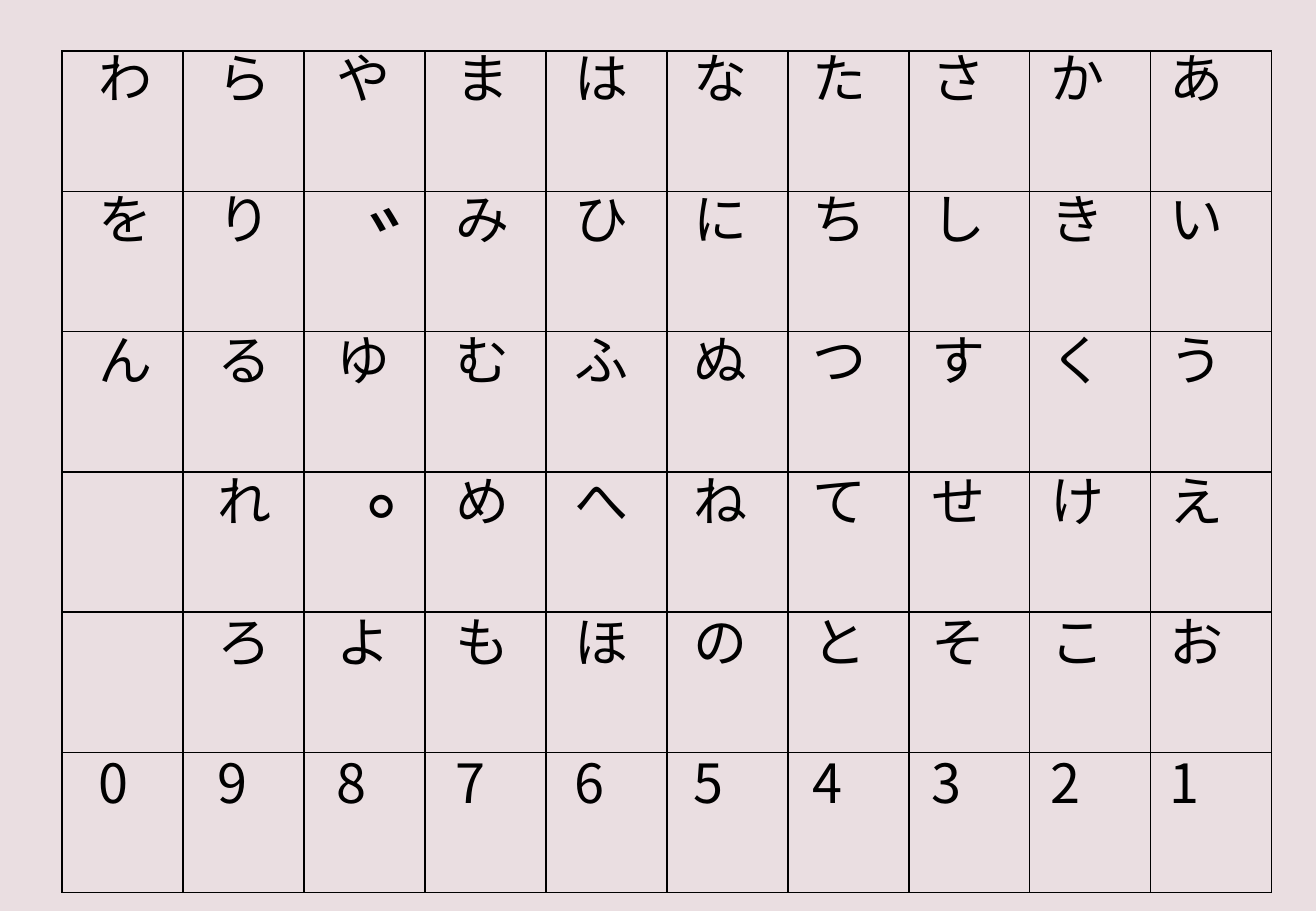
"""Build a hiragana letter board with a row of digits."""
from lxml.etree import SubElement
from pptx import Presentation
from pptx.dml.color import RGBColor
from pptx.enum.text import MSO_AUTO_SIZE as AutoSize
from pptx.oxml.ns import qn
from pptx.util import Pt

PX = 7526
FONT = "Noto Sans CJK JP"
COLORS = {"background": "EADEE1", "ink": "000000"}
KANA_COLUMNS = [
    "あいうえお1", "かきくけこ2", "さしすせそ3", "たちつてと4", "なにぬねの5",
    "はひふへほ6", "まみむめも7", "や ゆ よ8", "らりるれろ9", "わをん  0",
]
SOUND_MARKS = [("゛", 358, 186), ("゜", 356, 471)]
ROWS = 6


def add_letter(page, letter, left, top, height, size):
    box = page.shapes.add_textbox(left * PX, top * PX, 81 * PX, height * PX)
    frame = box.text_frame
    frame.word_wrap = True
    frame.auto_size = AutoSize.SHAPE_TO_FIT_TEXT
    frame.text = letter
    font = frame.paragraphs[0].runs[0].font
    font.size = Pt(size)
    font.name = FONT
    font.color.rgb = RGBColor.from_string(COLORS["ink"])
    SubElement(font._element, qn("a:ea"), typeface=FONT)


def add_borders(cell):
    properties = cell._tc.get_or_add_tcPr()
    for position, side in enumerate(("a:lnL", "a:lnR", "a:lnT", "a:lnB")):
        line = SubElement(properties, qn(side), w=str(Pt(1)))
        fill = SubElement(line, qn("a:solidFill"))
        SubElement(fill, qn("a:srgbClr"), val=COLORS["ink"])
        properties.insert(position, line)


deck = Presentation()
deck.slide_width = 1316 * PX
deck.slide_height = 911 * PX
page = deck.slides.add_slide(deck.slide_layouts[6])
page.background.fill.solid()
page.background.fill.fore_color.rgb = RGBColor.from_string(COLORS["background"])

board = page.shapes.add_table(
    ROWS, len(KANA_COLUMNS), 62 * PX, 51 * PX, 1210 * PX, 842 * PX
).table
board.first_row = False
board.horz_banding = False
for cell in board.iter_cells():
    cell.fill.background()
    add_borders(cell)

for column, letters in enumerate(KANA_COLUMNS):
    for row, letter in enumerate(letters):
        if letter != " ":
            add_letter(page, letter, 1158 - 119 * column, 39 + 141 * row, 78, 32)

for mark, left, top in SOUND_MARKS:
    add_letter(page, mark, left, top, 135, 60)

deck.save("out.pptx")
